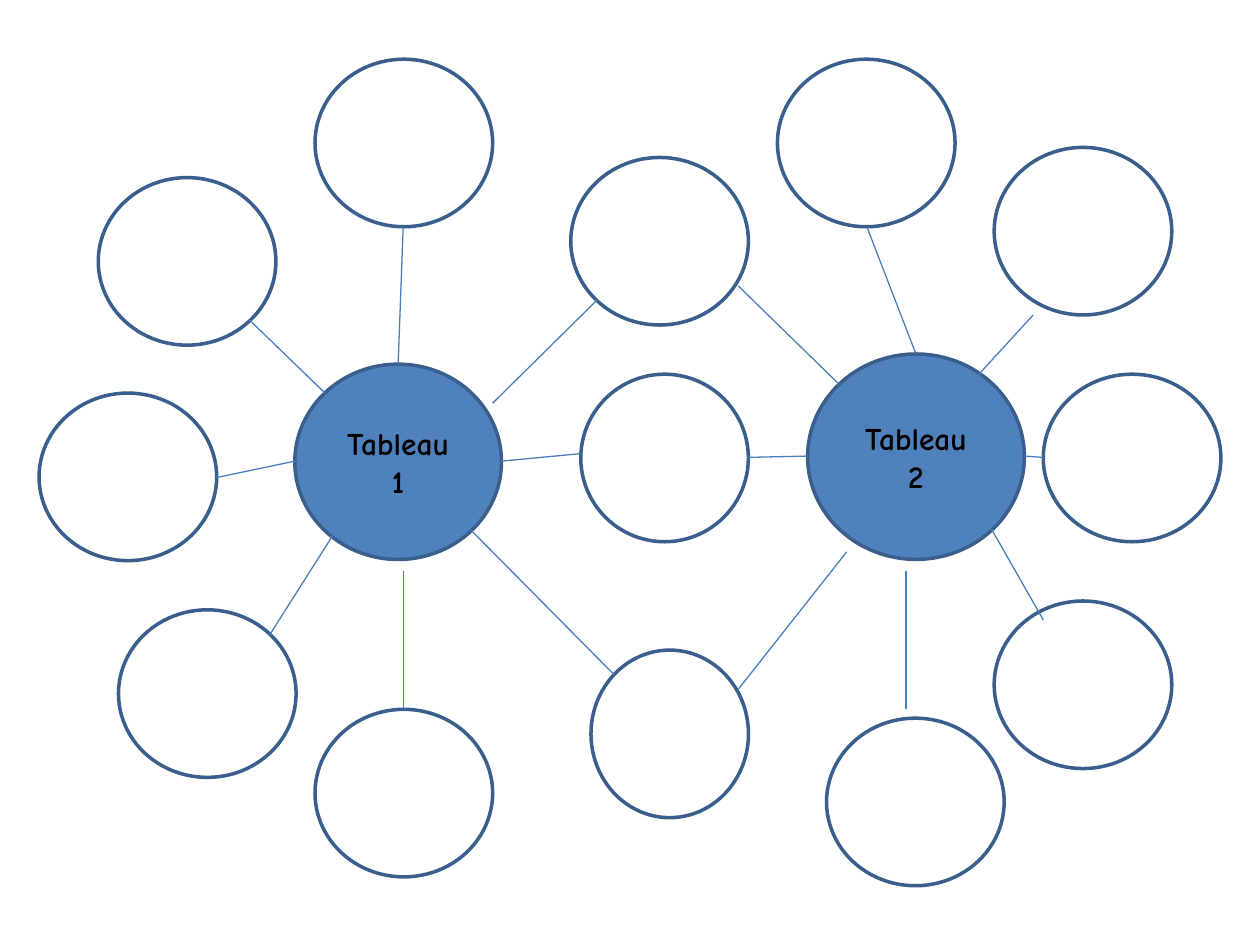
from lxml import etree
from pptx import Presentation
from pptx import util as u
from pptx.dml import color
from pptx.enum import shapes, text
from pptx.oxml import ns

COLORS = {"hub": "4F81BD", "outline": "3A5F8C", "link": "4B7EBC", "label": "000000"}
LABEL_FONT = {"name": "Comic Neue", "size": u.Pt(18), "bold": True}
BUBBLE_W, BUBBLE_H = 1.41, 1.33

LEFT_BOX = (0.31, 0.47)
LEFT_HUB = ("Tableau 1", 2.03, 2.42, 1.64, 1.55)
LEFT_BUBBLES = [(2.19, 5.16), (0.63, 4.37), (0, 2.65), (0.47, 0.94), (2.19, 0)]
LEFT_LINKS = [
    (2.89, 1.33, 2.85, 2.42),
    (2.89, 4.06, 2.89, 5.16),
    (2.35, 3.75, 1.83, 4.57),
    (1.41, 3.32, 2.03, 3.19),
    (1.67, 2.07, 2.27, 2.65),
]

RIGHT_BOX = (6.17, 0.47)
RIGHT_HUB = ("Tableau 2", 0.24, 2.34, 1.72, 1.63)
RIGHT_BUBBLES = [(0, 0), (0.39, 5.23), (1.72, 4.3), (1.72, 0.7), (2.11, 2.5)]
RIGHT_LINKS = [
    (1.96, 3.15, 2.11, 3.16),
    (2.03, 2.03, 1.49, 2.62),
    (0.71, 1.33, 1.1, 2.34),
    (1.7, 3.73, 2.11, 4.45),
    (1.02, 4.06, 1.02, 5.16),
]

SHARED_BOX = (3.74, 1.25)
SHARED_BUBBLES = [(0.79, 0, 1.41), (0.87, 1.72, 1.33), (0.95, 3.91, 1.25)]
SHARED_LINKS = [
    (1, 1.13, 0.17, 1.95),
    (2.2, 2.38, 2.67, 2.37),
    (0, 2.96, 1.13, 4.1),
    (0.87, 2.35, 0.24, 2.41),
    (2.98, 3.13, 2.12, 4.22),
    (2.12, 1.02, 2.92, 1.8),
]


def rgb(role):
    return color.RGBColor.from_string(COLORS[role])


def add_bubble(slide, box, x, y, width=BUBBLE_W, height=BUBBLE_H):
    bubble = slide.shapes.add_shape(
        shapes.MSO_SHAPE.OVAL,
        u.Inches(box[0] + x), u.Inches(box[1] + y),
        u.Inches(width), u.Inches(height),
    )
    bubble.shadow.inherit = False
    bubble.fill.background()
    bubble.line.color.rgb = rgb("outline")
    bubble.line.width = u.Pt(2)
    return bubble


def add_hub(slide, box, label, x, y, width, height):
    hub = add_bubble(slide, box, x, y, width, height)
    hub.fill.solid()
    hub.fill.fore_color.rgb = rgb("hub")
    frame = hub.text_frame
    frame.word_wrap = True
    frame.vertical_anchor = text.MSO_ANCHOR.MIDDLE
    paragraph = frame.paragraphs[0]
    paragraph.alignment = text.PP_ALIGN.CENTER
    run = paragraph.add_run()
    run.text = label
    for attribute, value in LABEL_FONT.items():
        setattr(run.font, attribute, value)
    run.font.color.rgb = rgb("label")


def add_link(slide, box, x1, y1, x2, y2):
    link = slide.shapes.add_connector(
        shapes.MSO_CONNECTOR.STRAIGHT,
        u.Inches(box[0] + x1), u.Inches(box[1] + y1),
        u.Inches(box[0] + x2), u.Inches(box[1] + y2),
    )
    link.line.color.rgb = rgb("link")
    link.line.width = u.Pt(0.75)
    etree.SubElement(link._element.spPr, ns.qn("a:effectLst"))


def add_cluster(slide, box, bubbles, links, hub=None):
    if hub:
        add_hub(slide, box, *hub)
    for bubble in bubbles:
        add_bubble(slide, box, *bubble)
    for link in links:
        add_link(slide, box, *link)


def main():
    deck = Presentation()
    deck.slide_width, deck.slide_height = u.Inches(10), u.Inches(7.5)
    slide = deck.slides.add_slide(deck.slide_layouts[6])
    add_cluster(slide, LEFT_BOX, LEFT_BUBBLES, LEFT_LINKS, LEFT_HUB)
    add_cluster(slide, RIGHT_BOX, RIGHT_BUBBLES, RIGHT_LINKS, RIGHT_HUB)
    add_cluster(slide, SHARED_BOX, SHARED_BUBBLES, SHARED_LINKS)
    deck.save("out.pptx")


if __name__ == "__main__":
    main()
